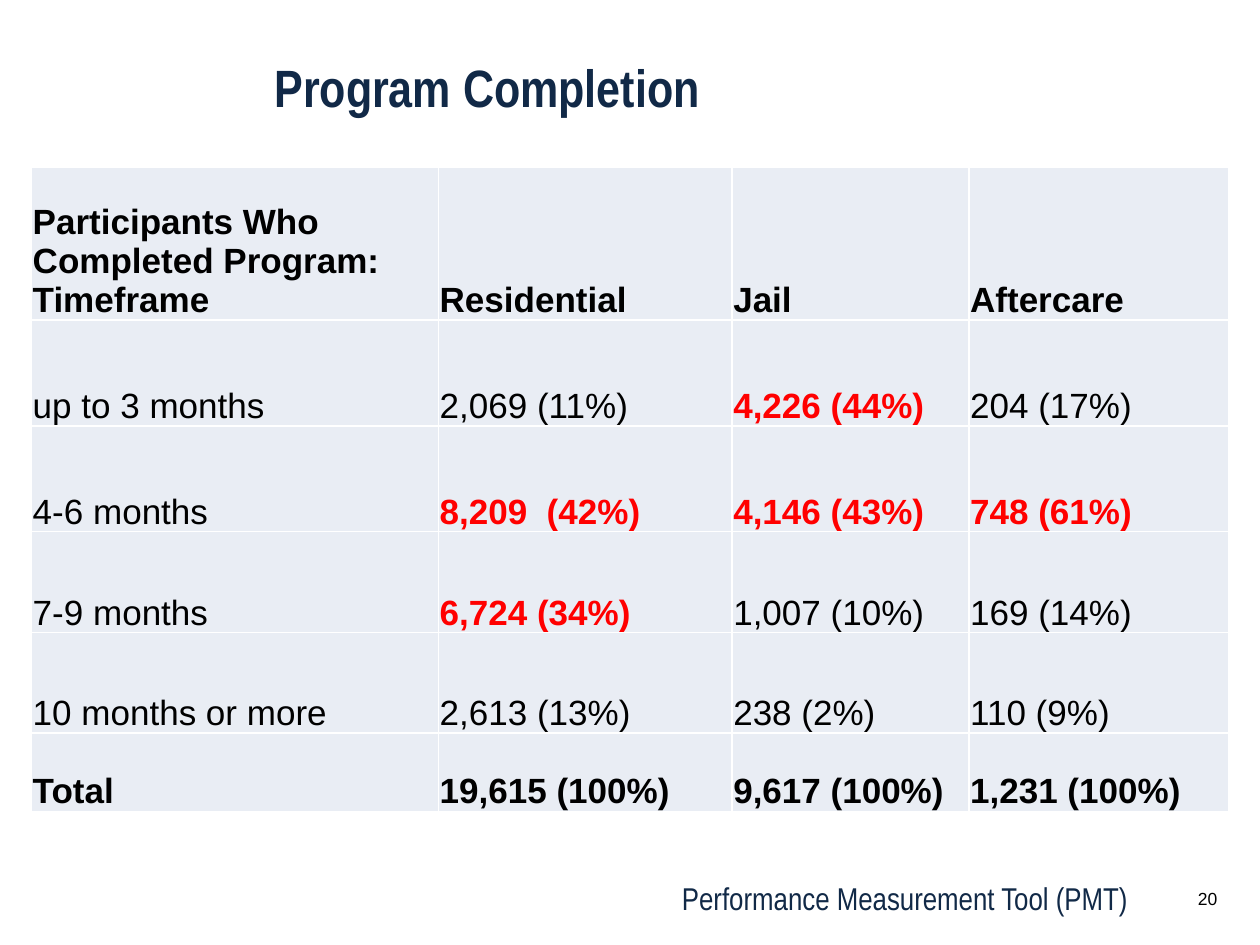
import pptx
import pptx.dml.color
import pptx.enum.text
import pptx.oxml
import pptx.oxml.ns
import pptx.util

Inches = pptx.util.Inches
Pt = pptx.util.Pt
ANCHOR = pptx.enum.text.MSO_ANCHOR
ALIGN = pptx.enum.text.PP_ALIGN
COLORS = {"navy": "112947", "black": "000000", "red": "FF0000",
          "cell": "E9EDF4", "border": "FFFFFF"}


def write(frame, text, font_name, size, color, bold=False):
    paragraph = frame.paragraphs[0]
    run = paragraph.add_run()
    run.text = text
    for key, value in {"name": font_name, "size": Pt(size), "bold": bold}.items():
        setattr(run.font, key, value)
    run.font.color.rgb = pptx.dml.color.RGBColor.from_string(COLORS[color])
    return paragraph


def add_borders(cell):
    properties = cell._tc.get_or_add_tcPr()
    for position, side in enumerate(("lnL", "lnR", "lnT", "lnB")):
        properties.insert(position, pptx.oxml.parse_xml(
            f'<a:{side} {pptx.oxml.ns.nsdecls("a")} w="{Pt(1)}"><a:solidFill>'
            f'<a:srgbClr val="{COLORS["border"]}"/></a:solidFill></a:{side}>'))


presentation = pptx.Presentation()
presentation.slide_width = Inches(10)
presentation.slide_height = Inches(7.5)
slide = presentation.slides.add_slide(presentation.slide_layouts[6])

# Footer
footer = slide.shapes.add_textbox(
    Inches(4.17), Inches(6.93), Inches(4.88), Inches(0.4)).text_frame
footer.word_wrap = True
write(footer, "Performance Measurement Tool (PMT)", "Arial Narrow", 18,
      "navy").alignment = ALIGN.RIGHT

# Title
title = slide.shapes.add_textbox(
    Inches(2.08), Inches(0.49), Inches(7.08), Inches(0.5)).text_frame
title.word_wrap = True
title.vertical_anchor = ANCHOR.BOTTOM
write(title, "Program Completion", "Arial Narrow", 30, "navy",
      True).line_spacing = Pt(31)

# Completion table
completion = [
    ["Participants Who Completed Program: Timeframe", "Residential", "Jail", "Aftercare"],
    ["up to 3 months", "2,069 (11%)", "4,226 (44%)", "204 (17%)"],
    ["4-6 months", "8,209  (42%)", "4,146 (43%)", "748 (61%)"],
    ["7-9 months", "6,724 (34%)", "1,007 (10%)", "169 (14%)"],
    ["10 months or more", "2,613 (13%)", "238 (2%)", "110 (9%)"],
    ["Total", "19,615 (100%)", "9,617 (100%)", "1,231 (100%)"],
]
highlights = {(1, 2), (2, 1), (2, 2), (2, 3), (3, 1)}
column_widths = [3.23, 2.33, 1.88, 2.06]
row_heights = [1.21, 0.84, 0.84, 0.8, 0.8, 0.62]
cell_format = {"margin_left": Inches(0.01), "margin_right": Inches(0.01),
               "margin_top": Inches(0.01), "margin_bottom": 0,
               "vertical_anchor": ANCHOR.BOTTOM}

table = slide.shapes.add_table(
    len(row_heights), len(column_widths), Inches(0.25), Inches(1.33),
    Inches(sum(column_widths)), Inches(sum(row_heights))).table
for column, width in zip(table.columns, column_widths):
    column.width = Inches(width)
for row, height in zip(table.rows, row_heights):
    row.height = Inches(height)

for r, values in enumerate(completion):
    for c, value in enumerate(values):
        cell = table.cell(r, c)
        for key, setting in cell_format.items():
            setattr(cell, key, setting)
        cell.fill.solid()
        cell.fill.fore_color.rgb = pptx.dml.color.RGBColor.from_string(COLORS["cell"])
        add_borders(cell)
        highlighted = (r, c) in highlights
        bold = highlighted or r in (0, len(completion) - 1)
        write(cell.text_frame, value, "Arial", 20,
              "red" if highlighted else "black", bold)

# Page number
page_number = slide.shapes.add_textbox(
    Inches(9.39), Inches(7), Inches(0.37), Inches(0.27)).text_frame
page_number.word_wrap = False
write(page_number, "20", "Arial", 10, "black").alignment = ALIGN.RIGHT

presentation.save("out.pptx")
